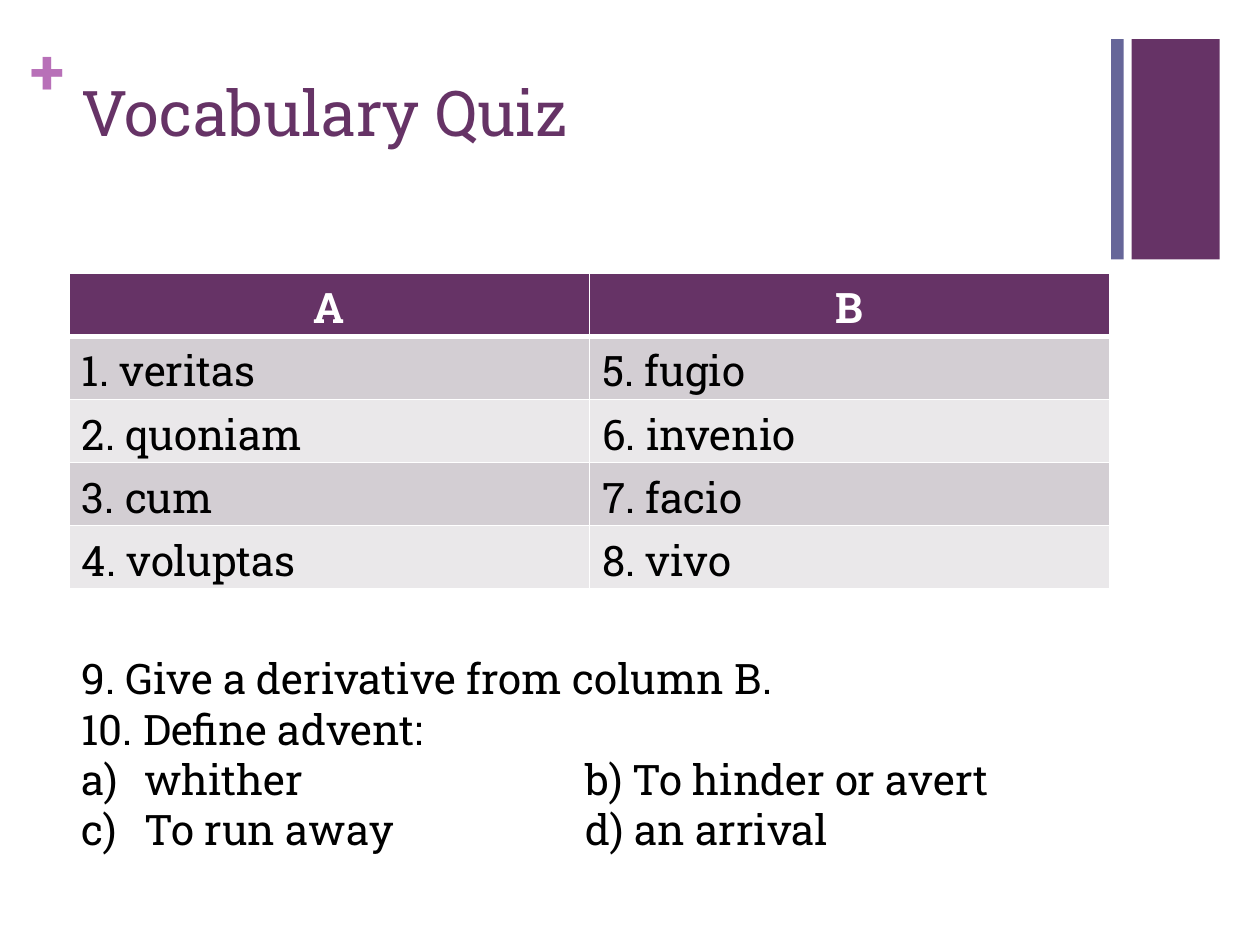
import pptx
import pptx.dml.color
import pptx.enum.shapes
import pptx.enum.text
import pptx.util
from pptx.oxml.xmlchemy import OxmlElement

Pt = pptx.util.Pt
RGBColor = pptx.dml.color.RGBColor
Align = pptx.enum.text.PP_ALIGN
AutoSize = pptx.enum.text.MSO_AUTO_SIZE

PURPLE = RGBColor(0x66, 0x33, 0x66)
ORCHID = RGBColor(0xB8, 0x70, 0xB8)
SLATE = RGBColor(0x66, 0x66, 0x99)
BAND_DARK = RGBColor(0xD3, 0xCE, 0xD3)
BAND_LIGHT = RGBColor(0xEA, 0xE8, 0xEA)
BLACK = RGBColor(0, 0, 0)
WHITE = RGBColor(0xFF, 0xFF, 0xFF)

LEFT, WIDTH = 39.6, 594.7


def add_child(parent, tag, **values):
    child = OxmlElement(tag)
    for name, value in values.items():
        child.set(name, str(value))
    parent.append(child)
    return child


class SlideBuilder:
    font_name = "Roboto Slab"

    def __init__(self, page):
        self.page = page

    def add_span(self, para, text, size, color, bold=False):
        span = para.add_run()
        span.text = text
        style = {"name": self.font_name, "size": Pt(size), "bold": bold}
        for name, value in style.items():
            setattr(span.font, name, value)
        span.font.color.rgb = color

    def bar(self, left, top, width, height, color):
        box = self.page.shapes.add_shape(
            pptx.enum.shapes.MSO_SHAPE.RECTANGLE, Pt(left), Pt(top), Pt(width), Pt(height))
        box.shadow.inherit = False
        box.fill.solid()
        box.fill.fore_color.rgb = color
        box.line.fill.background()

    def text(self, left, top, width, height, lines, size, color, bold=False, **frame_format):
        box = self.page.shapes.add_textbox(Pt(left), Pt(top), Pt(width), Pt(height))
        frame = box.text_frame
        frame.word_wrap = True
        for name, value in frame_format.items():
            setattr(frame, name, value)
        for index, line in enumerate(lines):
            para = frame.paragraphs[0] if index == 0 else frame.add_paragraph()
            self.add_span(para, line, size, color, bold)
        return frame.paragraphs

    def tab_stops(self, para, *positions):
        stops = add_child(para._p.get_or_add_pPr(), "a:tabLst")
        for position in positions:
            add_child(stops, "a:tab", pos=Pt(position), algn="l")

    def letter_bullet(self, para, indent):
        properties = para._p.get_or_add_pPr()
        properties.set("marL", str(Pt(indent)))
        properties.set("indent", str(-Pt(indent)))
        add_child(properties, "a:buFont", typeface="+mj-lt")
        add_child(properties, "a:buAutoNum", type="alphaLcParenR")

    def borders(self, cell, color, **widths):
        properties = cell._tc.get_or_add_tcPr()
        for position, (side, width) in enumerate(widths.items()):
            line = OxmlElement("a:ln" + side)
            line.set("w", str(Pt(width)))
            fill = add_child(line, "a:solidFill")
            add_child(fill, "a:srgbClr", val=color)
            properties.insert(position, line)

    def table(self, left, top, width, row_height, rows, size):
        columns = len(rows[0])
        table = self.page.shapes.add_table(
            len(rows), columns, Pt(left), Pt(top), Pt(width), Pt(row_height * len(rows))).table
        for r, row in enumerate(rows):
            header = r == 0
            fill = PURPLE if header else (BAND_LIGHT, BAND_DARK)[r % 2]
            for c, text in enumerate(row):
                cell = table.cell(r, c)
                cell.fill.solid()
                cell.fill.fore_color.rgb = fill
                para = cell.text_frame.paragraphs[0]
                para.alignment = Align.CENTER if header else Align.LEFT
                self.add_span(para, text, size, WHITE if header else BLACK, header)
                self.borders(cell, WHITE, L=1, R=1, T=3 if r == 1 else 1, B=3 if header else 1)


def main():
    deck = pptx.Presentation()
    deck.slide_width, deck.slide_height = Pt(720), Pt(540)
    builder = SlideBuilder(deck.slides.add_slide(deck.slide_layouts[6]))

    # Corner decoration
    builder.bar(646.6, 22.3, 50.4, 126, PURPLE)
    no_margins = dict.fromkeys(("margin_left", "margin_top", "margin_right", "margin_bottom"), 0)
    builder.text(17.3, 18, 20.9, 44, ["+"], 36, ORCHID, True,
                 auto_size=AutoSize.SHAPE_TO_FIT_TEXT, **no_margins)
    builder.bar(635, 22.3, 7.2, 126, SLATE)

    # Title
    builder.text(LEFT, 38.2, WIDTH, 87.8, ["Vocabulary Quiz"], 36, PURPLE)

    # Vocabulary columns
    builder.table(LEFT, 156.3, WIDTH, 36, [
        ("A", "B"),
        ("1. veritas", "5. fugio"),
        ("2. quoniam", "6. invenio"),
        ("3. cum", "7. facio"),
        ("4. voluptas", "8. vivo"),
    ], 24)

    # Further questions
    questions = builder.text(LEFT, 369.4, WIDTH, 123.8, [
        "9. Give a derivative from column B.",
        "10. Define advent:",
        "whither\tb) To hinder or avert",
        "c)\tTo run away\td) an arrival",
    ], 24, BLACK, auto_size=AutoSize.SHAPE_TO_FIT_TEXT)
    builder.letter_bullet(questions[2], 36)
    builder.tab_stops(questions[2], 288)
    builder.tab_stops(questions[3], 36, 288)

    deck.save("out.pptx")


if __name__ == "__main__":
    main()
